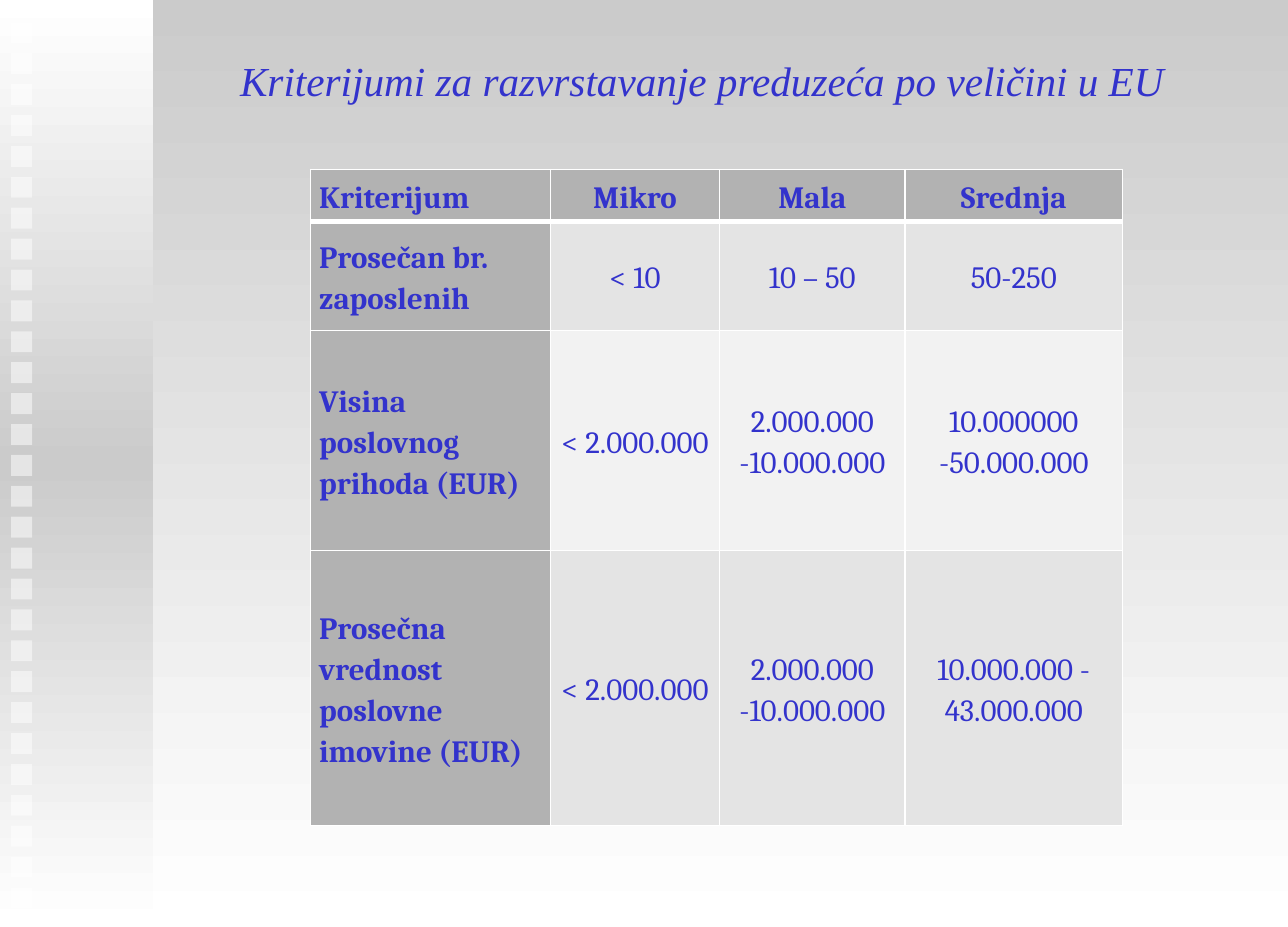
import copy

import lxml.etree
import pptx
import pptx.dml.color
import pptx.enum.shapes
import pptx.enum.text
import pptx.oxml.ns
import pptx.util

Cm, Pt = pptx.util.Cm, pptx.util.Pt
qn = pptx.oxml.ns.qn
MIDDLE = pptx.enum.text.MSO_ANCHOR.MIDDLE
ALIGN = pptx.enum.text.PP_ALIGN
RECT = pptx.enum.shapes.MSO_SHAPE.RECTANGLE

WHITE, GREY, HEADER, BLUE = "FFFFFF", "CBCBCB", "B2B2B2", "3333CC"
BANDS = ["E4E4E4", "F2F2F2"]


def rgb(color):
    return pptx.dml.color.RGBColor.from_string(color)


def fade_down(fill, colors):
    """Colour the existing, evenly spaced gradient stops from top to bottom."""
    fill.gradient_angle = 270
    for i, (stop, color) in enumerate(zip(fill.gradient_stops, colors)):
        stop.position = i / (len(colors) - 1)
        stop.color.rgb = rgb(color)


prs = pptx.Presentation()
prs.slide_width, prs.slide_height = Cm(26.47), Cm(19.05)
s = prs.slides.add_slide(prs.slide_layouts[5])

# Background and side panel
s.background.fill.gradient()
fade_down(s.background.fill, [GREY, WHITE])

panel = s.shapes.add_shape(RECT, 0, 0, Cm(3.15), prs.slide_height)
panel.shadow.inherit = False
panel.line.fill.background()
panel.fill.gradient()
stops = panel._element.spPr.find(".//" + qn("a:gsLst"))
stops.insert(1, copy.deepcopy(stops[0]))
fade_down(panel.fill, [WHITE, GREY, WHITE])

# Column of half-transparent squares
square_count, first_top, last_top = 29, 0.46, 18.24
step = (last_top - first_top) / (square_count - 1)
for i in range(square_count):
    sp = s.shapes.add_shape(RECT, Cm(0.23), Cm(first_top + i * step), Cm(0.43), Cm(0.43))
    sp.shadow.inherit = False
    sp.line.fill.background()
    sp.fill.solid()
    sp.fill.fore_color.rgb = rgb(WHITE)
    color = sp._element.spPr.find(".//" + qn("a:srgbClr"))
    lxml.etree.SubElement(color, qn("a:alpha"), val="50000")

# Title
title = s.shapes.title
title.left, title.top, title.width, title.height = Cm(3.23), Cm(0.53), Cm(22.4), Cm(2.21)
tf = title.text_frame
tf.auto_size = pptx.enum.text.MSO_AUTO_SIZE.NONE
tf.vertical_anchor = MIDDLE
p = tf.paragraphs[0]
p.alignment = ALIGN.CENTER
r = p.add_run()
r.text = "Kriterijumi za razvrstavanje preduzeća po veličini u EU"
title_format = {"name": "Times New Roman", "size": Pt(24), "italic": True}
for name, value in title_format.items():
    setattr(r.font, name, value)
r.font.color.rgb = rgb(BLUE)

# Table of criteria
rows = [
    ["Kriterijum", "Mikro", "Mala", "Srednja"],
    ["Prosečan br. zaposlenih", "< 10", "10 – 50", "50-250"],
    ["Visina poslovnog prihoda (EUR)", "< 2.000.000", "2.000.000 -10.000.000",
     "10.000000 -50.000.000"],
    ["Prosečna vrednost poslovne imovine (EUR)", "< 2.000.000", "2.000.000 -10.000.000",
     "10.000.000 - 43.000.000"],
]
col_widths = [4.93, 3.48, 3.81, 4.47]
row_heights = [1.07, 2.24, 4.52, 5.66]
cell_format = {"margin_left": Cm(0.18), "margin_right": Cm(0.18), "margin_top": 0,
               "margin_bottom": 0, "vertical_anchor": MIDDLE}

table = s.shapes.add_table(len(rows), len(col_widths), Cm(6.38), Cm(3.48),
                           Cm(sum(col_widths)), Cm(sum(row_heights))).table
for column, width in zip(table.columns, col_widths):
    column.width = Cm(width)
for row, height in zip(table.rows, row_heights):
    row.height = Cm(height)

for i, texts in enumerate(rows):
    for j, text in enumerate(texts):
        cell = table.cell(i, j)
        for name, value in cell_format.items():
            setattr(cell, name, value)

        borders = {"L": 1, "R": 1, "T": 3 if i == 1 else 1, "B": 3 if i == 0 else 1}
        for side, width in borders.items():
            ln = lxml.etree.SubElement(cell._tc.get_or_add_tcPr(), qn("a:ln" + side),
                                       w=str(Pt(width)))
            line_fill = lxml.etree.SubElement(ln, qn("a:solidFill"))
            lxml.etree.SubElement(line_fill, qn("a:srgbClr"), val=WHITE)

        is_heading = i == 0 or j == 0
        cell.fill.solid()
        cell.fill.fore_color.rgb = rgb(HEADER if is_heading else BANDS[(i - 1) % 2])

        p = cell.text_frame.paragraphs[0]
        p.alignment = ALIGN.LEFT if j == 0 else ALIGN.CENTER
        p.line_spacing = 1.15
        r = p.add_run()
        r.text = text
        for name, value in {"name": "Cambria", "size": Pt(18), "bold": is_heading}.items():
            setattr(r.font, name, value)
        r.font.color.rgb = rgb(BLUE)

prs.save("out.pptx")
